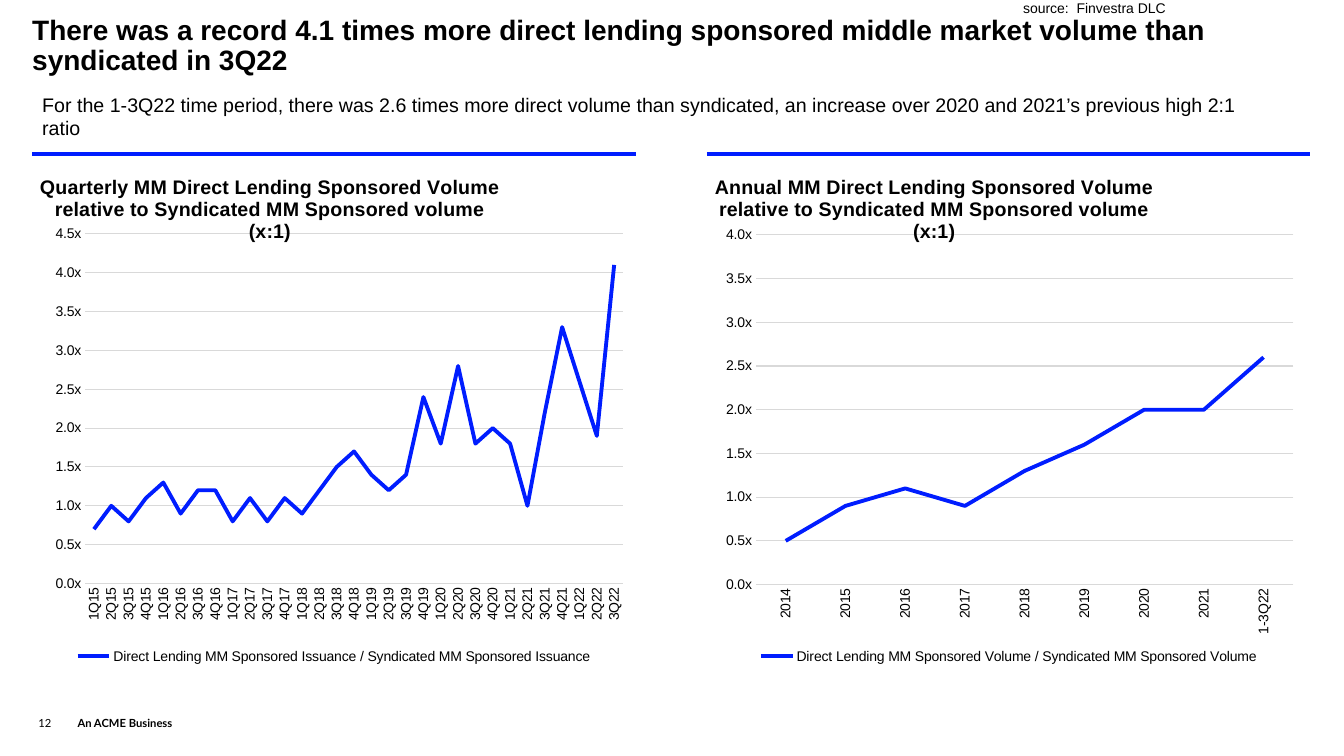
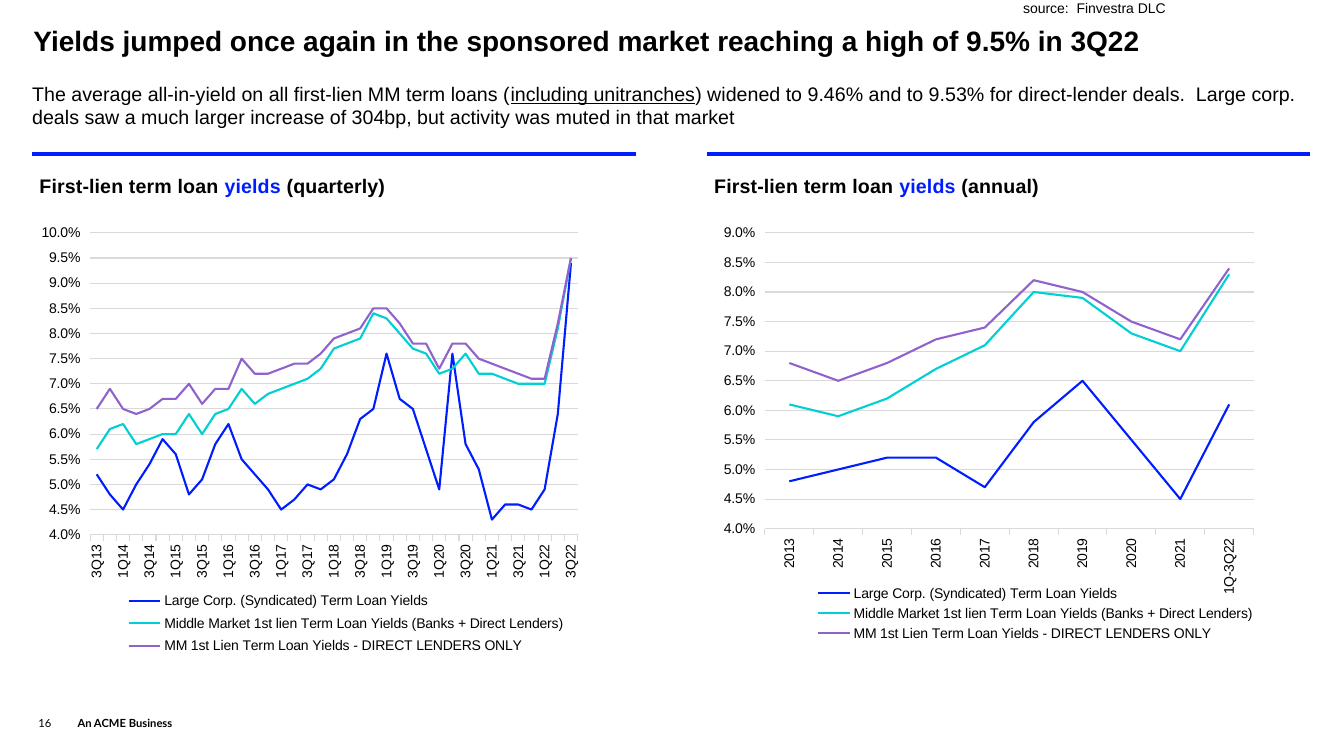
from lxml import etree
from pptx import Presentation
from pptx.chart.data import CategoryChartData
from pptx.dml.color import RGBColor
from pptx.enum import chart as ch, shapes, text
from pptx.oxml.ns import qn
from pptx.util import Pt

# Shared style
BLACK, BLUE, TEAL, PURPLE, GRID = "000000", "001DFF", "00CFD3", "9063CC", "D9D9D9"
BODY, FOOT = "Arial", "Lato"
COLUMNS, COLUMN_W = (23, 505), 431
RULE_Y, CHART_Y, CHART_H = 110.2, 117.4, 360
SOURCE, FOOTER = "source:  Finvestra DLC", "An ACME Business"


def quarters(quarter, year, count):
    steps = range(quarter - 1, quarter - 1 + count)
    return [f"{i % 4 + 1}Q{year + i // 4}" for i in steps]


# Content; text is a list of (words, extra format) runs
RATIO = dict(format="0.0\\x", low=0, step=0.5, line=2.75, scale=1,
             colors=[BLUE], tick=ch.XL_TICK_MARK.NONE)
YIELD = dict(format="0.0%", low=0.04, step=0.005, line=1.5, scale=100,
             colors=[BLUE, TEAL, PURPLE], tick=ch.XL_TICK_MARK.OUTSIDE)
YIELD_NAMES = ["Large Corp. (Syndicated) Term Loan Yields",
               "Middle Market 1st lien Term Loan Yields (Banks + Direct Lenders)",
               "MM 1st Lien Term Loan Yields - DIRECT LENDERS ONLY"]


def ratio_title(period):
    return [(f"{period} MM Direct Lending Sponsored Volume relative to "
             "Syndicated MM Sponsored volume (x:1)", {})]


def yield_title(period):
    return [("First-lien term loan ", {}), ("yields", {"color": BLUE}), (f" ({period})", {})]


SLIDES = [
    dict(
        number="12",
        title="There was a record 4.1 times more direct lending sponsored middle market "
              "volume than syndicated in 3Q22",
        title_box=(23, 11.5, 913, 43),
        subtitle=[("For the 1-3Q22 time period, there was 2.6 times more direct volume than "
                   "syndicated, an increase over 2020 and 2021’s previous high 2:1 ratio", {})],
        subtitle_box=(30.2, 66.2, 882.7, 41),
        charts=[
            dict(RATIO, title=ratio_title("Quarterly"), high=4.5, cats=quarters(1, 15, 31),
                 plot=(0.088, 0.138, 0.891, 0.694),
                 names=["Direct Lending MM Sponsored Issuance / Syndicated MM Sponsored Issuance"],
                 values=[[0.7, 1, 0.8, 1.1, 1.3, 0.9, 1.2, 1.2, 0.8, 1.1, 0.8, 1.1, 0.9, 1.2, 1.5,
                          1.7, 1.4, 1.2, 1.4, 2.4, 1.8, 2.8, 1.8, 2, 1.8, 1, 2.2, 3.3, 2.6, 1.9,
                          4.1]]),
            dict(RATIO, title=ratio_title("Annual"), high=4,
                 cats=[str(y) for y in range(2014, 2022)] + ["1-3Q22"],
                 plot=(0.081, 0.14, 0.891, 0.694),
                 names=["Direct Lending MM Sponsored Volume / Syndicated MM Sponsored Volume"],
                 values=[[0.5, 0.9, 1.1, 0.9, 1.3, 1.6, 2, 2, 2.6]]),
        ]),
    dict(
        number="16",
        title="Yields jumped once again in the sponsored market reaching a high of 9.5% in 3Q22",
        title_box=(23.8, 19.4, 913, 39),
        subtitle=[("The average all-in-yield on all first-lien MM term loans (", {}),
                  ("including unitranches", {"underline": True}),
                  (") widened to 9.46% and to 9.53% for direct-lender deals.  Large corp. deals "
                   "saw a much larger increase of 304bp, but activity was muted in that market",
                   {})],
        subtitle_box=(23, 58.3, 913, 46),
        charts=[
            dict(YIELD, title=yield_title("quarterly"), high=0.1, cats=quarters(3, 13, 37),
                 skip=2, plot=(0.096, 0.136, 0.808, 0.599), legend=(0.15, 0.838, 0.74, 0.146),
                 names=YIELD_NAMES,
                 values=[
                     [5.2, 4.8, 4.5, 5, 5.4, 5.9, 5.6, 4.8, 5.1, 5.8, 6.2, 5.5, 5.2, 4.9, 4.5, 4.7,
                      5, 4.9, 5.1, 5.6, 6.3, 6.5, 7.6, 6.7, 6.5, 5.7, 4.9, 7.6, 5.8, 5.3, 4.3, 4.6,
                      4.6, 4.5, 4.9, 6.4, 9.4],
                     [5.7, 6.1, 6.2, 5.8, 5.9, 6, 6, 6.4, 6, 6.4, 6.5, 6.9, 6.6, 6.8, 6.9, 7, 7.1,
                      7.3, 7.7, 7.8, 7.9, 8.4, 8.3, 8, 7.7, 7.6, 7.2, 7.3, 7.6, 7.2, 7.2, 7.1, 7,
                      7, 7, 8.1, 9.5],
                     [6.5, 6.9, 6.5, 6.4, 6.5, 6.7, 6.7, 7, 6.6, 6.9, 6.9, 7.5, 7.2, 7.2, 7.3, 7.4,
                      7.4, 7.6, 7.9, 8, 8.1, 8.5, 8.5, 8.2, 7.8, 7.8, 7.3, 7.8, 7.8, 7.5, 7.4, 7.3,
                      7.2, 7.1, 7.1, 8.2, 9.5]]),
            dict(YIELD, title=yield_title("annual"), high=0.09,
                 cats=[str(y) for y in range(2013, 2022)] + ["1Q-3Q22"],
                 plot=(0.096, 0.136, 0.81, 0.587), legend=(0.174, 0.827, 0.74, 0.128),
                 names=YIELD_NAMES,
                 values=[[4.8, 5, 5.2, 5.2, 4.7, 5.8, 6.5, 5.5, 4.5, 6.1],
                         [6.1, 5.9, 6.2, 6.7, 7.1, 8, 7.9, 7.3, 7, 8.3],
                         [6.8, 6.5, 6.8, 7.2, 7.4, 8.2, 8, 7.5, 7.2, 8.4]]),
        ]),
]


# Helpers
def rgb(value):
    return RGBColor.from_string(value)


def style(font, size, name=BODY, bold=False, color=BLACK):
    font.size, font.name, font.bold = Pt(size), name, bold
    font.color.rgb = rgb(color)


def write(p, runs, size, **look):
    style(p.font, size, **look)
    for words, extra in runs:
        r = p.add_run()
        r.text = words
        if "color" in extra:
            r.font.color.rgb = rgb(extra["color"])
        if "underline" in extra:
            r.font.underline = extra["underline"]


def frame(sp, box, anchor=text.MSO_ANCHOR.TOP):
    sp.left, sp.top, sp.width, sp.height = map(Pt, box)
    tf = sp.text_frame
    tf.word_wrap, tf.auto_size, tf.vertical_anchor = True, text.MSO_AUTO_SIZE.NONE, anchor
    tf.margin_left = tf.margin_right = tf.margin_top = tf.margin_bottom = 0
    return tf.paragraphs[0]


def add_text(s, box, runs, size, anchor=text.MSO_ANCHOR.TOP, **look):
    sp = s.shapes.add_textbox(*map(Pt, box))
    write(frame(sp, box, anchor), runs, size, **look)


def add_rule(s, left):
    line = s.shapes.add_connector(shapes.MSO_CONNECTOR.STRAIGHT, Pt(left), Pt(RULE_Y),
                                  Pt(left + COLUMN_W), Pt(RULE_Y))
    line.line.color.rgb, line.line.width = rgb(BLUE), Pt(3)
    etree.SubElement(line._element.spPr, qn("a:effectLst"))


def place(parent, after, position, inner=False):
    """Give a chart part a manual layout, as fractions of the chart."""
    for old in parent.findall(qn("c:layout")):
        parent.remove(old)
    layout = etree.Element(qn("c:layout"))
    manual = etree.SubElement(layout, qn("c:manualLayout"))
    settings = [("layoutTarget", "inner")] if inner else []
    settings += [("xMode", "edge"), ("yMode", "edge")] + list(zip("xywh", position))
    for tag, value in settings:
        etree.SubElement(manual, qn("c:" + tag)).set("val", str(value))
    before = parent.find(qn(after)) if after else None
    parent.insert(0 if before is None else parent.index(before) + 1, layout)


def add_chart(s, left, d):
    data = CategoryChartData(number_format=d["format"])
    data.categories = d["cats"]
    for name, values in zip(d["names"], d["values"]):
        data.add_series(name, [round(v / d["scale"], 3) for v in values])
    chart = s.shapes.add_chart(ch.XL_CHART_TYPE.LINE, Pt(left), Pt(CHART_Y),
                               Pt(COLUMN_W), Pt(CHART_H), data).chart
    root = chart._chartSpace
    style(chart.font, 10)

    # Title and plot area
    chart.has_title = True
    write(chart.chart_title.text_frame.paragraphs[0], d["title"], 14, bold=True)
    place(root.xpath("c:chart/c:title")[0], "c:tx", (0.007, 0.012))
    place(root.xpath("c:chart/c:plotArea")[0], None, d["plot"], inner=True)

    # Legend
    chart.has_legend = True
    chart.legend.position = ch.XL_LEGEND_POSITION.BOTTOM
    chart.legend.include_in_layout = False
    style(chart.legend.font, 10)
    if "legend" in d:
        place(root.xpath("c:chart/c:legend")[0], "c:legendPos", d["legend"])

    # Axes
    cat, val = chart.category_axis, chart.value_axis
    val.minimum_scale, val.maximum_scale, val.major_unit = d["low"], d["high"], d["step"]
    val.tick_labels.number_format = d["format"]
    val.tick_labels.number_format_is_linked = False
    val.format.line.fill.background()
    for axis in (cat, val):
        axis.major_tick_mark, axis.minor_tick_mark = d["tick"], ch.XL_TICK_MARK.NONE
        style(axis.tick_labels.font, 10)
    for line in (cat.format.line, val.major_gridlines.format.line):
        line.color.rgb, line.width = rgb(GRID), Pt(0.75)
    turned = root.xpath(".//c:catAx/c:txPr/a:bodyPr")[0]
    turned.set("rot", "-5400000")
    turned.set("vert", "horz")
    if "skip" in d:
        skip = etree.Element(qn("c:tickLblSkip"))
        skip.set("val", str(d["skip"]))
        root.xpath(".//c:catAx/c:noMultiLvlLbl")[0].addprevious(skip)

    # Series
    plot = chart.plots[0]
    plot.vary_by_categories = False
    for series, color in zip(plot.series, d["colors"]):
        series.smooth = False
        series.marker.style = ch.XL_MARKER_STYLE.NONE
        series.format.line.color.rgb = rgb(color)
        series.format.line.width = Pt(d["line"])


def build(prs, d):
    s = prs.slides.add_slide(prs.slide_layouts[5])
    p = frame(s.shapes.title, d["title_box"])
    p.alignment, p.line_spacing = text.PP_ALIGN.LEFT, 0.9
    write(p, [(d["title"], {})], 20, bold=True)
    add_text(s, d["subtitle_box"], d["subtitle"], 14)
    add_text(s, (730.8, 0, 229, 19.4), [(SOURCE, {})], 10)

    # Footer
    bottom = text.MSO_ANCHOR.BOTTOM
    add_text(s, (27.4, 506.9, 28, 14.4), [(d["number"], {})], 8, bottom, name=FOOT)
    add_text(s, (55.4, 506.9, 124.6, 14.4), [(FOOTER, {})], 8, bottom, name=FOOT, bold=True)

    # Two chart columns
    for left, chart in zip(COLUMNS, d["charts"]):
        add_rule(s, left)
        add_chart(s, left, chart)


def main():
    prs = Presentation()
    prs.slide_width, prs.slide_height = Pt(960), Pt(540)
    for d in SLIDES:
        build(prs, d)
    prs.save("out.pptx")


if __name__ == "__main__":
    main()
